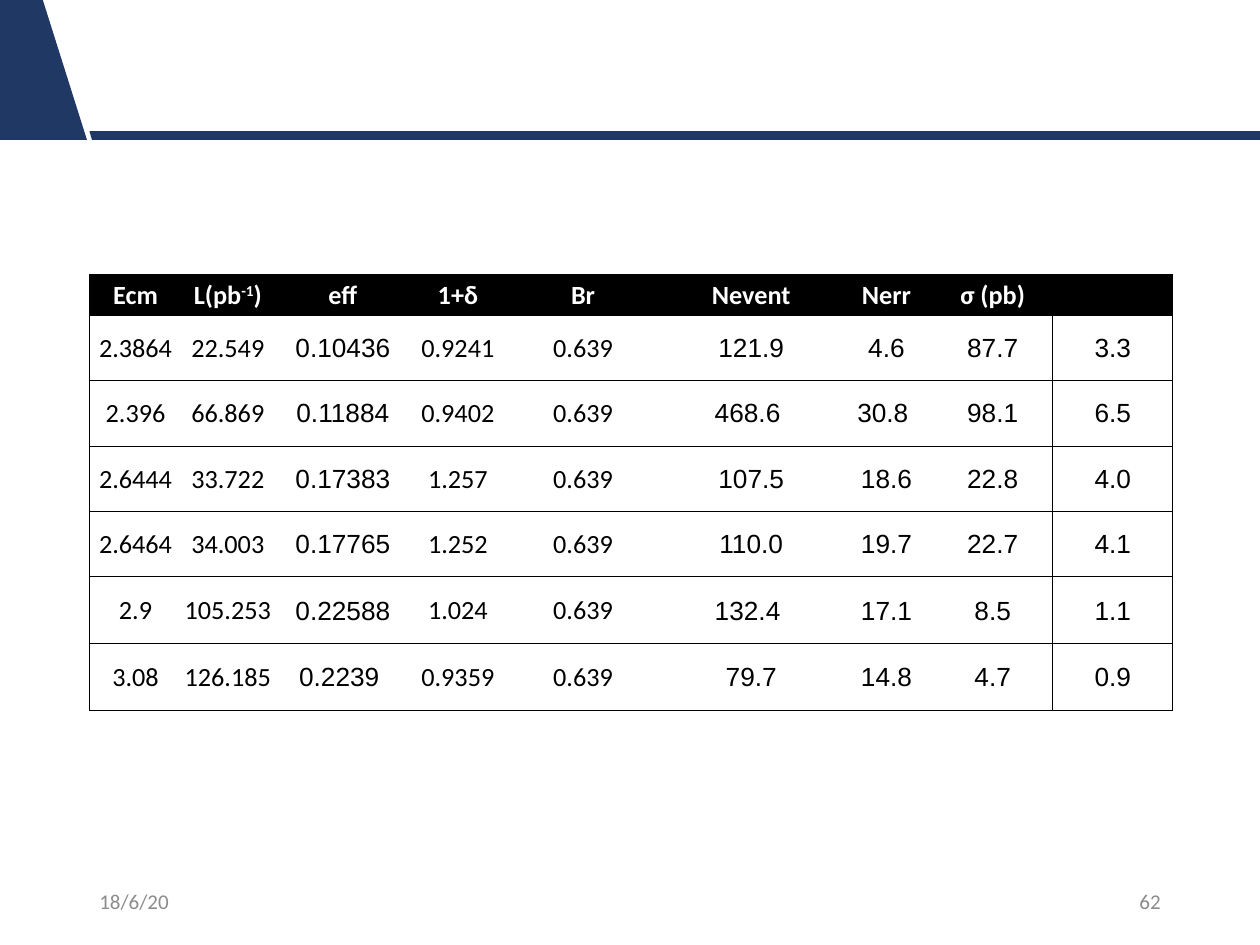
import pptx
import pptx.util
import pptx.dml.color
import pptx.enum.text
import pptx.oxml.ns
import lxml.etree

# Content: header cells are lists of (text, is superscript)
HEADER = [[("Ecm", False)], [("L(pb", False), ("-1", True), (")", False)],
          [("eff", False)], [("1+δ", False)], [("Br", False)],
          [("Nevent", False)], [("Nerr", False)], [("σ (pb)", False)], []]
ROWS = [
    ["2.3864", "22.549", "0.10436", "0.9241", "0.639", "121.9", "4.6", "87.7", "3.3"],
    ["2.396", "66.869", "0.11884", "0.9402", "0.639", "468.6 ", "30.8 ", "98.1", "6.5"],
    ["2.6444", "33.722", "0.17383", "1.257", "0.639", "107.5", "18.6", "22.8", "4.0"],
    ["2.6464", "34.003", "0.17765", "1.252", "0.639", "110.0", "19.7", "22.7", "4.1"],
    ["2.9", "105.253", "0.22588", "1.024", "0.639", "132.4 ", "17.1", "8.5", "1.1"],
    ["3.08", "126.185", "0.2239 ", "0.9359", "0.639", "79.7", "14.8", "4.7", "0.9"],
]
DATE, PAGE_NUMBER = "18/6/20", "62"

# Layout
WIDTH, HEIGHT = 10, 7.5
BAND_BOTTOM = 1.11
BANDS = [
    [(0, 0), (0.34, 0), (0.69, BAND_BOTTOM), (0, BAND_BOTTOM)],
    [(0.71, 1.04), (WIDTH, 1.04), (WIDTH, BAND_BOTTOM), (0.73, BAND_BOTTOM)],
]
TABLE_LEFT, TABLE_TOP, TABLE_WIDTH = 0.71, 2.18, 8.6
COLUMN_SHARES = [0.73, 0.73, 1.09, 0.73, 1.25, 1.41, 0.73, 0.95, 0.95]
ROW_HEIGHTS = [0.32] + [0.52] * 4 + [0.53] * 2
ARIAL_COLUMNS = {2, 5, 6, 7, 8}
NO_STYLE = "{2D5ABB26-0587-4C30-8999-92F81FD0307C}"
NAVY, BLACK, WHITE, GREY = "203864", "000000", "FFFFFF", "8C8C8C"

inch = pptx.util.Inches
align = pptx.enum.text.PP_ALIGN
middle = pptx.enum.text.MSO_ANCHOR.MIDDLE


def paint(target, color):
    target.solid()
    target.fore_color.rgb = pptx.dml.color.RGBColor.from_string(color)


def add_span(para, text, size, font, color, bold=False, superscript=False):
    span = para.add_run()
    span.text = text
    span.font.size = pptx.util.Pt(size)
    span.font.name = font
    span.font.bold = bold
    paint(span.font.fill, color)
    if superscript:
        span.font._element.set("baseline", "30000")


def add_border(cell, side):
    name = pptx.oxml.ns.qn
    properties = cell._tc.get_or_add_tcPr()
    line = lxml.etree.SubElement(properties, name("a:ln" + side), w=str(pptx.util.Pt(0.5)))
    fill = lxml.etree.SubElement(line, name("a:solidFill"))
    lxml.etree.SubElement(fill, name("a:srgbClr"), val=BLACK)


def add_band(page, points):
    outline = [(inch(x), inch(y)) for x, y in points]
    builder = page.shapes.build_freeform(*outline[0])
    builder.add_line_segments(outline[1:], close=True)
    band = builder.convert_to_shape()
    band.shadow.inherit = False
    paint(band.fill, NAVY)
    band.line.fill.background()


def add_results(page):
    last = len(COLUMN_SHARES) - 1
    frame = page.shapes.add_table(
        len(ROW_HEIGHTS), len(COLUMN_SHARES), inch(TABLE_LEFT), inch(TABLE_TOP),
        inch(TABLE_WIDTH), inch(sum(ROW_HEIGHTS)))
    table = frame.table
    table.horz_banding = False
    table._tbl.tblPr.find(pptx.oxml.ns.qn("a:tableStyleId")).text = NO_STYLE
    for column, share in zip(table.columns, COLUMN_SHARES):
        column.width = inch(TABLE_WIDTH * share / sum(COLUMN_SHARES))
    for row, height in zip(table.rows, ROW_HEIGHTS):
        row.height = inch(height)

    body = [[[(text, False)] for text in row] for row in ROWS]
    for r, row in enumerate([HEADER] + body):
        for c, spans in enumerate(row):
            is_header = r == 0
            cell = table.cell(r, c)
            cell.margin_left = cell.margin_right = cell.margin_top = inch(0.01)
            cell.margin_bottom = 0
            cell.vertical_anchor = middle
            # Outer frame, row rules and a box round the last column
            sides = ("L" if c in (0, last) else "") + ("R" if c >= last - 1 else "") + "TB"
            for side in sides:
                add_border(cell, side)
            if is_header:
                paint(cell.fill, BLACK)
            else:
                cell.fill.background()
            para = cell.text_frame.paragraphs[0]
            para.alignment = align.CENTER
            font = "Arial" if not is_header and c in ARIAL_COLUMNS else "Calibri"
            for text, superscript in spans:
                add_span(para, text, 15, font, WHITE if is_header else BLACK,
                         is_header, superscript)


def add_footer(page, text, left, alignment):
    box = page.shapes.add_textbox(inch(left), inch(6.95), inch(2.25), inch(0.4))
    box.text_frame.word_wrap = True
    box.text_frame.vertical_anchor = middle
    para = box.text_frame.paragraphs[0]
    para.alignment = alignment
    add_span(para, text, 12, "Calibri", GREY)


def main():
    deck = pptx.Presentation()
    deck.slide_width, deck.slide_height = inch(WIDTH), inch(HEIGHT)
    page = deck.slides.add_slide(deck.slide_layouts[6])
    for points in BANDS:
        add_band(page, points)
    add_results(page)
    add_footer(page, DATE, 0.69, align.LEFT)
    add_footer(page, PAGE_NUMBER, 7.06, align.RIGHT)
    deck.save("out.pptx")


if __name__ == "__main__":
    main()
